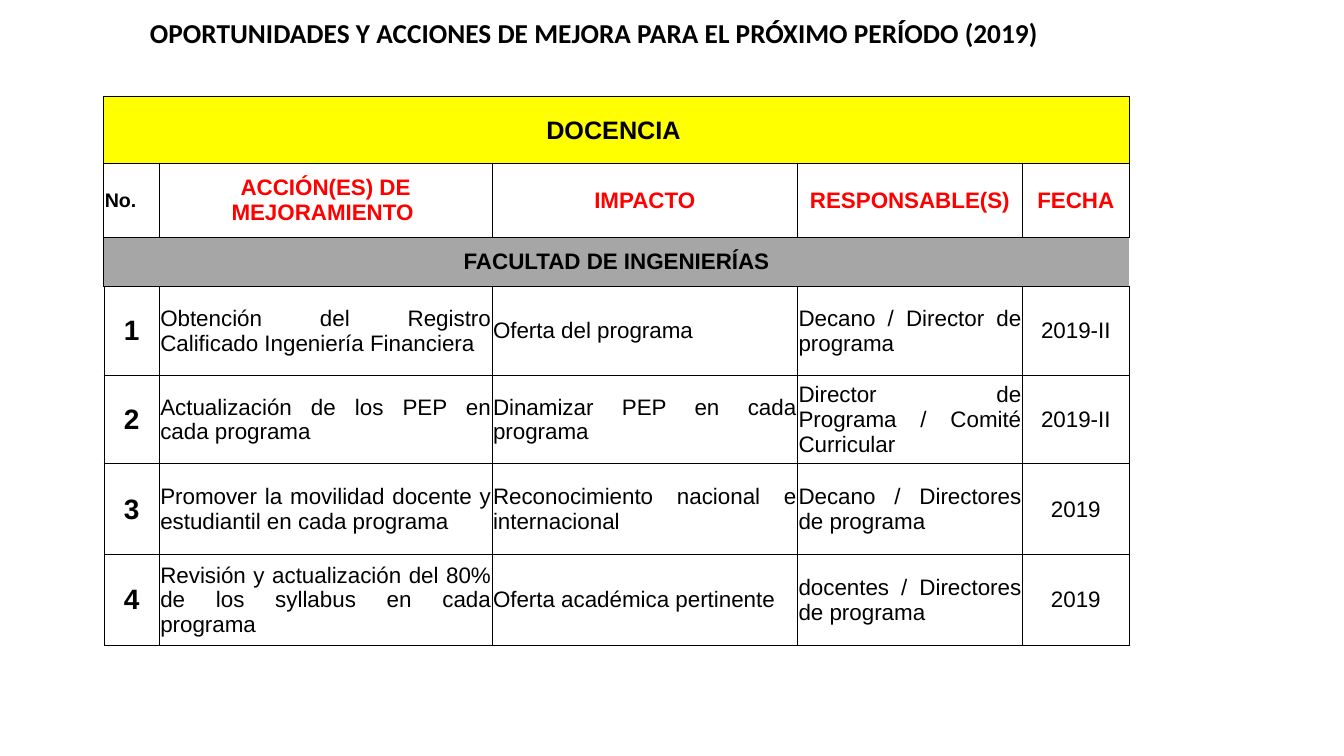
from dataclasses import dataclass

import pptx
import pptx.dml.color
import pptx.enum.text
import pptx.oxml
import pptx.oxml.ns
import pptx.presentation
import pptx.slide
import pptx.table
import pptx.util
from pptx.util import Inches

ALIGN = pptx.enum.text.PP_ALIGN
MIDDLE = pptx.enum.text.MSO_ANCHOR.MIDDLE


@dataclass(frozen=True)
class Theme:
    title_font: str = "Calibri"
    table_font: str = "Arial"
    black: str = "000000"
    red: str = "FF0000"
    yellow: str = "FFFF00"
    grey: str = "A6A6A6"
    white: str = "FFFFFF"
    title_size: float = 19.5
    section_size: float = 18
    body_size: float = 16
    corner_size: float = 14
    number_size: float = 20


THEME = Theme()


@dataclass(frozen=True)
class TextStyle:
    size: float = THEME.body_size
    bold: bool = True
    color: str = THEME.black
    align: ALIGN = ALIGN.CENTER
    font: str = THEME.table_font


@dataclass(frozen=True)
class Action:
    action: str
    impact: str
    responsible: str
    date: str


TITLE = TextStyle(size=THEME.title_size, font=THEME.title_font)
SECTION = TextStyle(size=THEME.section_size)
FACULTY = TextStyle()
CORNER = TextStyle(size=THEME.corner_size, align=ALIGN.JUSTIFY)
HEADING = TextStyle(color=THEME.red)
NUMBER = TextStyle(size=THEME.number_size)
BODY = TextStyle(bold=False, align=ALIGN.JUSTIFY)
DATE = TextStyle(bold=False)

THIN = {"L": 0.5, "R": 0.5, "T": 0.5, "B": 0.5}
SECTION_BORDERS = {"L": 1, "R": 0.5, "T": 1, "B": 1}
CORNER_BORDERS = {"L": 1, "R": 0.5, "T": 1, "B": 0.5}
FACULTY_BORDERS = {"L": 1, "R": 0, "T": 0.5, "B": 0.5}

COLUMN_WIDTHS = (0.55, 3.3, 3.03, 2.23, 1.06)
ROW_HEIGHTS = (0.66, 0.73, 0.49, 0.88, 0.88, 0.9, 0.9)
HEADINGS = ("No.", "ACCIÓN(ES) DE MEJORAMIENTO ", "IMPACTO", "RESPONSABLE(S)", "FECHA")
ACTIONS = (
    Action("Obtención del Registro Calificado Ingeniería Financiera",
           "Oferta del programa", "Decano / Director de programa", "2019-II"),
    Action("Actualización de los PEP en cada programa",
           "Dinamizar PEP en cada programa",
           "Director de Programa / Comité Curricular", "2019-II"),
    Action("Promover la movilidad docente y estudiantil en cada programa ",
           "Reconocimiento nacional e internacional",
           "Decano / Directores de programa", "2019"),
    Action("Revisión y actualización del 80% de los syllabus en cada programa",
           "Oferta académica pertinente",
           "docentes / Directores de programa", "2019"),
)


def write_text(frame: pptx.text.text.TextFrame, text: str, style: TextStyle) -> None:
    frame.text = text
    para = frame.paragraphs[0]
    para.alignment = style.align
    font = para.runs[0].font
    font.name = style.font
    font.size = pptx.util.Pt(style.size)
    font.bold = style.bold
    font.color.rgb = pptx.dml.color.RGBColor.from_string(style.color)


def set_borders(cell: pptx.table._Cell, widths: dict[str, float]) -> None:
    """Draw each side at its width in points; zero hides the side."""
    properties = cell._tc.get_or_add_tcPr()
    for side, width in widths.items():
        paint = (f'<a:solidFill><a:srgbClr val="{THEME.black}"/></a:solidFill>'
                 if width else "<a:noFill/>")
        properties.append(pptx.oxml.parse_xml(
            f'<a:ln{side} {pptx.oxml.ns.nsdecls("a")} w="{pptx.util.Pt(width)}">'
            f"{paint}</a:ln{side}>"))


def format_cell(cell: pptx.table._Cell, fill: str | None, borders: dict[str, float]) -> None:
    cell.vertical_anchor = MIDDLE
    cell.margin_left = cell.margin_right = cell.margin_top = Inches(0.01)
    cell.margin_bottom = 0
    set_borders(cell, borders)
    if fill is None:
        cell.fill.background()
    else:
        cell.fill.solid()
        cell.fill.fore_color.rgb = pptx.dml.color.RGBColor.from_string(fill)


def add_band(table: pptx.table.Table, row: int, text: str, style: TextStyle,
             fill: str, borders: dict[str, float]) -> None:
    """Fill a row with one cell that spans every column."""
    last = len(COLUMN_WIDTHS) - 1
    for column in range(last + 1):
        format_cell(table.cell(row, column), fill, borders)
    table.cell(row, 0).merge(table.cell(row, last))
    write_text(table.cell(row, 0).text_frame, text, style)


def add_title(page: pptx.slide.Slide) -> None:
    box = page.shapes.add_textbox(Inches(0.58), Inches(0.05), Inches(10.63), Inches(0.55))
    box.text_frame.word_wrap = True
    box.text_frame.vertical_anchor = MIDDLE
    write_text(box.text_frame,
               "OPORTUNIDADES Y ACCIONES DE MEJORA PARA EL PRÓXIMO PERÍODO (2019)", TITLE)


def add_action_table(page: pptx.slide.Slide) -> None:
    table = page.shapes.add_table(
        len(ROW_HEIGHTS), len(COLUMN_WIDTHS), Inches(1.03), Inches(0.96),
        Inches(sum(COLUMN_WIDTHS)), Inches(sum(ROW_HEIGHTS))).table
    table.first_row = table.horz_banding = False
    for column, width in zip(table.columns, COLUMN_WIDTHS):
        column.width = Inches(width)
    for row, height in zip(table.rows, ROW_HEIGHTS):
        row.height = Inches(height)

    add_band(table, 0, "DOCENCIA ", SECTION, THEME.yellow, SECTION_BORDERS)
    for index, heading in enumerate(HEADINGS):
        cell = table.cell(1, index)
        format_cell(cell, None, THIN if index else CORNER_BORDERS)
        write_text(cell.text_frame, heading, HEADING if index else CORNER)
    add_band(table, 2, "FACULTAD DE INGENIERÍAS", FACULTY, THEME.grey, FACULTY_BORDERS)

    styles = (NUMBER, BODY, BODY, BODY, DATE)
    for number, item in enumerate(ACTIONS, start=1):
        texts = (str(number), item.action, item.impact, item.responsible, item.date)
        for index, (text, style) in enumerate(zip(texts, styles)):
            cell = table.cell(number + 2, index)
            format_cell(cell, THEME.white, THIN)
            write_text(cell.text_frame, text, style)


def main() -> None:
    deck = pptx.Presentation()
    deck.slide_width = Inches(13.33)
    deck.slide_height = Inches(7.5)
    page = deck.slides.add_slide(deck.slide_layouts[6])
    add_title(page)
    add_action_table(page)
    deck.save("out.pptx")


if __name__ == "__main__":
    main()
